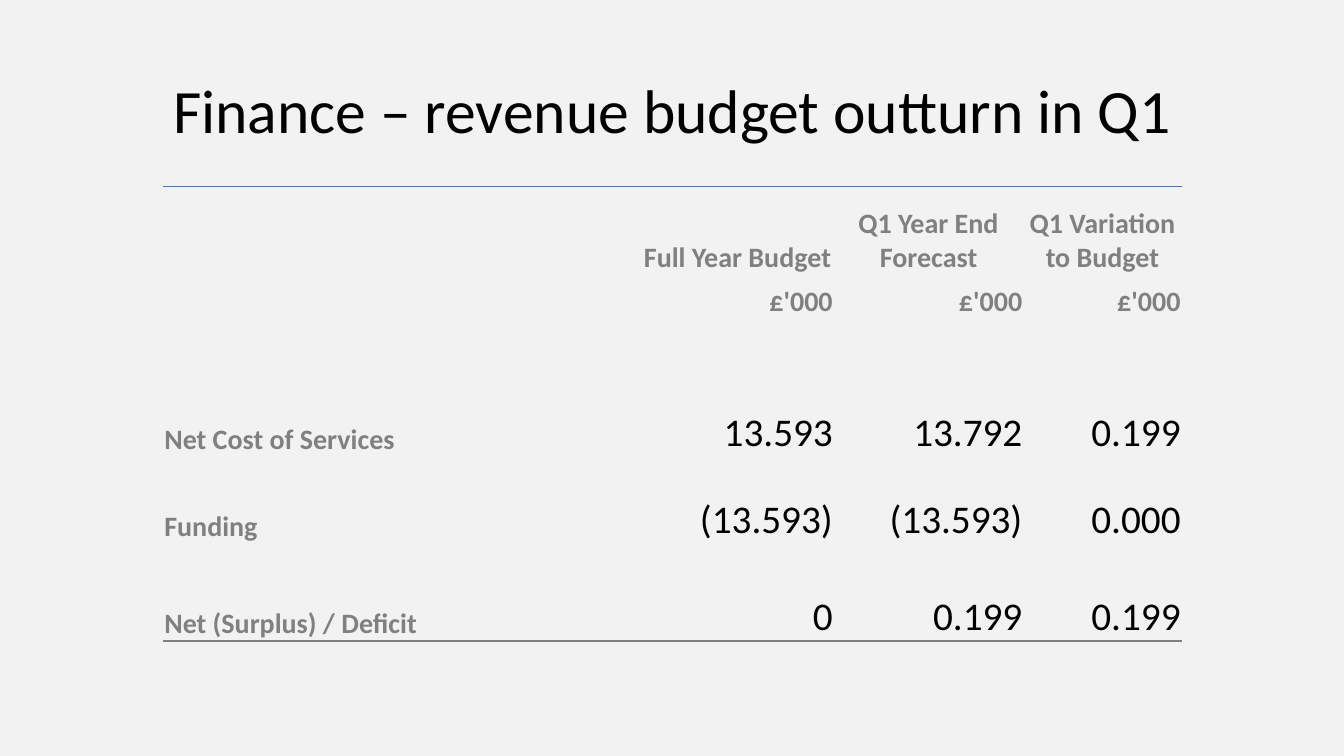
from dataclasses import dataclass

from lxml import etree
from pptx import Presentation
from pptx.dml.color import RGBColor
from pptx.enum.text import MSO_ANCHOR, MSO_AUTO_SIZE, PP_ALIGN
from pptx.oxml.ns import qn
from pptx.slide import Slide
from pptx.table import Table, _Cell
from pptx.text.text import _Paragraph
from pptx.util import Inches, Pt

LEFT, CENTER, RIGHT = PP_ALIGN.LEFT, PP_ALIGN.CENTER, PP_ALIGN.RIGHT
MIDDLE, BOTTOM = MSO_ANCHOR.MIDDLE, MSO_ANCHOR.BOTTOM
NO_AUTOFIT = MSO_AUTO_SIZE.NONE
TITLE_ONLY_LAYOUT = 5
PLAIN_TABLE_STYLE = "{2D5ABB26-0587-4C30-8999-92F81FD0307C}"


@dataclass(frozen=True)
class Theme:
    font: str = "Calibri"
    background: str = "F2F2F2"
    ink: str = "000000"
    muted: str = "808080"
    top_rule: str = "4472C4"
    bottom_rule: str = "808080"
    title_size: int = 44
    label_size: int = 20
    figure_size: int = 28
    rule_width: int = 1


@dataclass(frozen=True)
class TextStyle:
    size: int
    color: str
    bold: bool = False


@dataclass(frozen=True)
class BudgetRow:
    height: float
    texts: tuple[str, ...] = ("", "", "", "")
    align: PP_ALIGN = RIGHT
    is_heading: bool = False


THEME = Theme()
TITLE_STYLE = TextStyle(THEME.title_size, THEME.ink)
LABEL_STYLE = TextStyle(THEME.label_size, THEME.muted, True)
FIGURE_STYLE = TextStyle(THEME.figure_size, THEME.ink)

COLUMN_WIDTHS = (4.74, 1.91, 1.88, 1.57)
BUDGET_ROWS = (
    BudgetRow(0.88, ("", "Full Year Budget", "Q1 Year End Forecast",
                     "Q1 Variation to Budget"), CENTER, True),
    BudgetRow(0.44, ("", "£'000", "£'000", "£'000"), RIGHT, True),
    BudgetRow(0.44),
    BudgetRow(0.44),
    BudgetRow(0.44, ("Net Cost of Services", "13.593", "13.792", "0.199")),
    BudgetRow(0.86, ("Funding", "(13.593)", "(13.593)", "0.000")),
    BudgetRow(0.48),
    BudgetRow(0.48, ("Net (Surplus) / Deficit", "0", "0.199", "0.199")),
)


def add_text(paragraph: _Paragraph, text: str, style: TextStyle, align: PP_ALIGN) -> None:
    paragraph.alignment = align
    run = paragraph.add_run()
    run.text = text
    run.font.name = THEME.font
    run.font.size = Pt(style.size)
    run.font.bold = style.bold
    run.font.color.rgb = RGBColor.from_string(style.color)


def add_rule(cell: _Cell, edge: str, color: str) -> None:
    """Draw one cell border; edge is lnT for the top or lnB for the bottom."""
    line = etree.Element(qn(f"a:{edge}"), w=str(Pt(THEME.rule_width)))
    fill = etree.SubElement(line, qn("a:solidFill"))
    etree.SubElement(fill, qn("a:srgbClr"), val=color)
    cell._tc.get_or_add_tcPr().insert(0, line)


def add_title(slide: Slide, text: str) -> None:
    title = slide.shapes.title
    title.left, title.top = Inches(0.92), Inches(0.4)
    title.width, title.height = Inches(11.5), Inches(1.45)
    frame = title.text_frame
    frame.word_wrap = True
    frame.auto_size = NO_AUTOFIT
    frame.vertical_anchor = MIDDLE
    frame.paragraphs[0].line_spacing = 0.9
    add_text(frame.paragraphs[0], text, TITLE_STYLE, CENTER)


def fill_cell(cell: _Cell, row: BudgetRow, column: int) -> None:
    cell.fill.background()
    text = row.texts[column]
    if not text:
        return
    cell.vertical_anchor = BOTTOM
    cell.margin_left = cell.margin_top = cell.margin_right = Inches(0.01)
    cell.margin_bottom = 0
    is_label = row.is_heading or column == 0
    add_text(cell.text_frame.paragraphs[0], text,
             LABEL_STYLE if is_label else FIGURE_STYLE,
             LEFT if column == 0 else row.align)


def clear_table_style(table: Table) -> None:
    table.first_row = table.horz_banding = False
    table._tbl.tblPr.find(qn("a:tableStyleId")).text = PLAIN_TABLE_STYLE


def add_budget_table(slide: Slide) -> None:
    table = slide.shapes.add_table(
        len(BUDGET_ROWS), len(COLUMN_WIDTHS), Inches(1.62), Inches(1.85),
        Inches(sum(COLUMN_WIDTHS)), Inches(sum(row.height for row in BUDGET_ROWS)),
    ).table
    clear_table_style(table)
    for column, width in enumerate(COLUMN_WIDTHS):
        table.columns[column].width = Inches(width)
    for index, row in enumerate(BUDGET_ROWS):
        table.rows[index].height = Inches(row.height)
        for column in range(len(COLUMN_WIDTHS)):
            fill_cell(table.cell(index, column), row, column)
    for column in range(len(COLUMN_WIDTHS)):
        add_rule(table.cell(0, column), "lnT", THEME.top_rule)
        add_rule(table.cell(len(BUDGET_ROWS) - 1, column), "lnB", THEME.bottom_rule)


def main() -> None:
    presentation = Presentation()
    presentation.slide_width = Inches(13.33)
    presentation.slide_height = Inches(7.5)
    slide = presentation.slides.add_slide(presentation.slide_layouts[TITLE_ONLY_LAYOUT])
    background = slide.background.fill
    background.solid()
    background.fore_color.rgb = RGBColor.from_string(THEME.background)
    add_title(slide, "Finance – revenue budget outturn in Q1")
    add_budget_table(slide)
    presentation.save("out.pptx")


if __name__ == "__main__":
    main()
